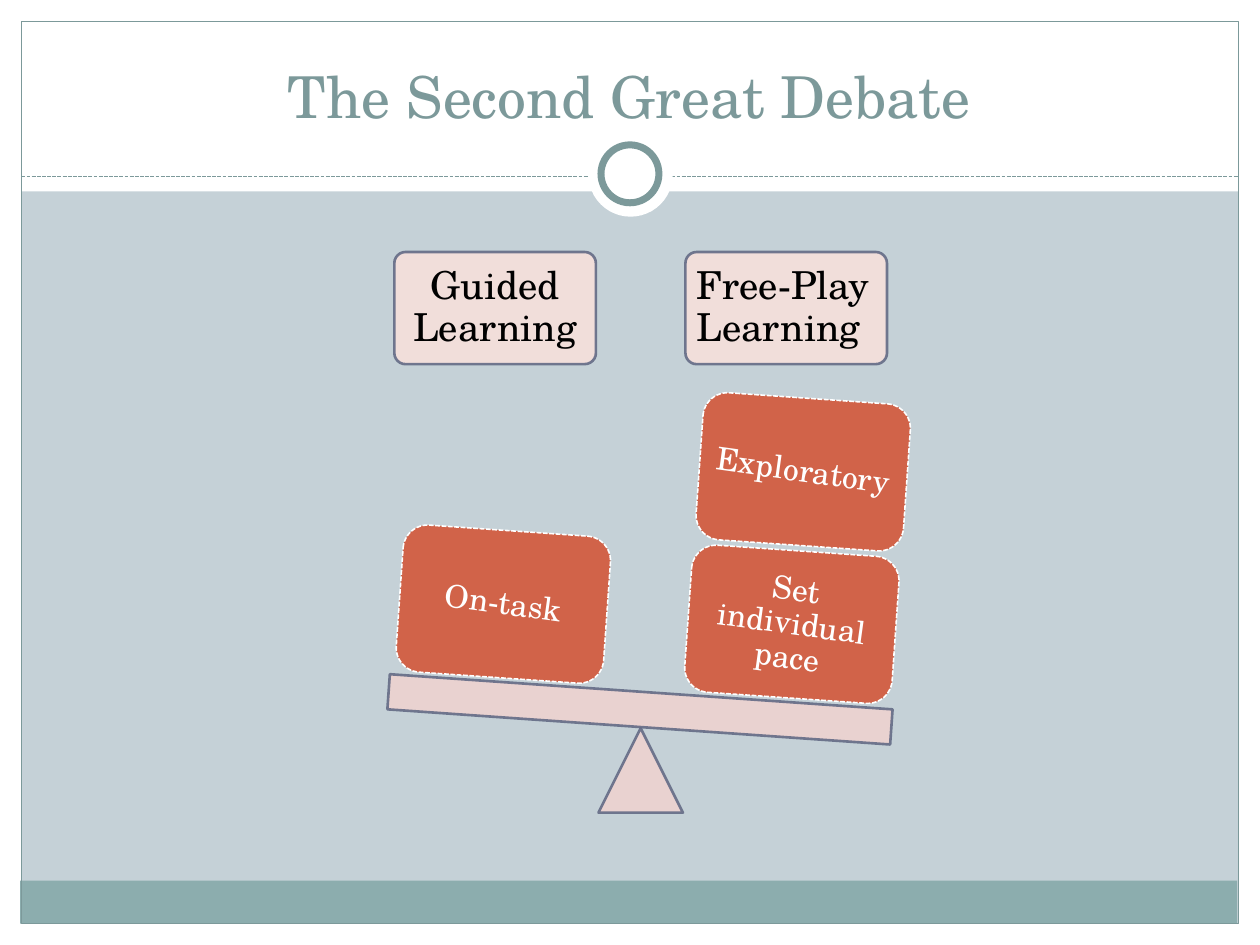
"""Build a slide that weighs guided learning against free-play learning."""
from dataclasses import dataclass

from pptx import Presentation
from pptx.dml.color import RGBColor
from pptx.enum.dml import MSO_LINE
from pptx.enum.shapes import MSO_CONNECTOR, MSO_SHAPE
from pptx.enum.text import MSO_ANCHOR, MSO_AUTO_SIZE, PP_ALIGN
from pptx.oxml.ns import qn
from pptx.util import Inches, Pt
from lxml import etree

RECTANGLE = MSO_SHAPE.RECTANGLE
ROUNDED = MSO_SHAPE.ROUNDED_RECTANGLE
OVAL = MSO_SHAPE.OVAL
TRIANGLE = MSO_SHAPE.ISOSCELES_TRIANGLE
STRAIGHT = MSO_CONNECTOR.STRAIGHT
DASH = MSO_LINE.SQUARE_DOT
MIDDLE, BOTTOM = MSO_ANCHOR.MIDDLE, MSO_ANCHOR.BOTTOM
CENTER, LEFT = PP_ALIGN.CENTER, PP_ALIGN.LEFT
NO_AUTOFIT = MSO_AUTO_SIZE.NONE

FONT = "TeX Gyre Schola"
WHITE, BLACK = "FFFFFF", "000000"
BACKGROUND, TEAL, FOOTER = "C5D1D7", "7C999A", "8CADAE"
SLATE, HEADING, BALANCE, WEIGHT = "646B86", "F6E0DB", "EED3D0", "D16349"
WIDTH, HEIGHT, MARGIN = 10, 7.5, 0.17
TILT = 4


@dataclass
class Block:
    left: float
    top: float
    width: float
    height: float
    kind: int = RECTANGLE
    fill: str | None = WHITE
    line: str | None = None
    weight: float = 0.75
    dash: int | None = None
    rotation: float = 0
    alpha: int = 100


@dataclass
class Label:
    text: str
    size: float
    color: str
    inset: float = 0.05
    align: int = CENTER
    anchor: int = MIDDLE
    spacing: float = 0.9


def rgb(value: str) -> RGBColor:
    """Turn a hex string into a colour."""
    return RGBColor.from_string(value)


def draw_block(page, block: Block):
    """Draw one preset shape."""
    box = page.shapes.add_shape(
        block.kind, *map(Inches, (block.left, block.top, block.width, block.height)))
    box.shadow.inherit = False
    box.rotation = block.rotation
    if block.fill:
        box.fill.solid()
        box.fill.fore_color.rgb = rgb(block.fill)
    else:
        box.fill.background()
    if block.line:
        box.line.color.rgb = rgb(block.line)
        box.line.width = Pt(block.weight)
        box.line.dash_style = block.dash
    else:
        box.line.fill.background()
    if block.alpha < 100:
        for color in box.element.iter(qn("a:srgbClr")):
            etree.SubElement(color, qn("a:alpha"), val=str(block.alpha * 1000))
    return box


def write_label(box, label: Label) -> None:
    """Fill a text shape with one formatted paragraph."""
    frame = box.text_frame
    inset = Inches(label.inset)
    formats = {
        "word_wrap": True, "auto_size": NO_AUTOFIT, "vertical_anchor": label.anchor,
        "margin_left": inset, "margin_right": inset,
        "margin_top": inset, "margin_bottom": inset,
    }
    for name, value in formats.items():
        setattr(frame, name, value)
    para = frame.paragraphs[0]
    para.alignment = label.align
    para.line_spacing = label.spacing
    span = para.add_run()
    span.text = label.text
    for name, value in {"name": FONT, "size": Pt(label.size), "bold": False}.items():
        setattr(span.font, name, value)
    span.font.color.rgb = rgb(label.color)


def draw_frame(page) -> None:
    """Draw the white border, footer band, divider and ring."""
    for block in (
        Block(0, HEIGHT - MARGIN, WIDTH, MARGIN),
        Block(0, 0, WIDTH, 1.52),
        Block(0, 0, MARGIN, HEIGHT),
        Block(WIDTH - MARGIN, 0, MARGIN, HEIGHT),
        Block(0.16, 6.99, 9.66, 0.34, fill=FOOTER),
        Block(MARGIN, MARGIN, WIDTH - 2 * MARGIN, HEIGHT - 2 * MARGIN,
              fill=None, line=TEAL),
    ):
        draw_block(page, block)
    divider = page.shapes.add_connector(
        STRAIGHT, *map(Inches, (MARGIN, 1.4, WIDTH - MARGIN, 1.4)))
    divider.line.color.rgb = rgb(TEAL)
    divider.line.width = Pt(0.75)
    divider.line.dash_style = DASH
    etree.SubElement(divider.element.spPr, qn("a:effectLst"))
    draw_block(page, Block(4.67, 1.05, 0.67, 0.67, OVAL))
    draw_block(page, Block(4.77, 1.15, 0.46, 0.46, OVAL, line=TEAL, weight=4))


def place_title(page, text: str) -> None:
    """Move the title placeholder above the frame and format it."""
    title = page.shapes.title
    title.element.getparent().append(title.element)
    places = {"left": 0.33, "top": 0.25, "width": 9.33, "height": 0.83}
    for name, value in places.items():
        setattr(title, name, Inches(value))
    write_label(title, Label(text, 33, TEAL, anchor=BOTTOM, spacing=1))


def draw_heading(page, left: float, text: str, align: int) -> None:
    """Draw the heading over one side of the balance."""
    block = Block(left, 2, 1.6, 0.89, ROUNDED, HEADING, SLATE, 1.5, alpha=90)
    draw_block(page, block).adjustments[0] = 0.1
    box = page.shapes.add_textbox(
        *map(Inches, (left, block.top, block.width, block.height)))
    write_label(box, Label(text, 22, BLACK, 0.09, align))


def draw_weight(page, left: float, top: float, text: str) -> None:
    """Draw a tilted weight and its text, which tilts twice as far."""
    block = Block(left, top, 1.65, 1.17, ROUNDED, WEIGHT, WHITE, 0.9, DASH, TILT)
    draw_block(page, block)
    box = page.shapes.add_textbox(
        *map(Inches, (left, top, block.width, block.height)))
    box.rotation = 2 * TILT
    write_label(box, Label(text, 18, WHITE, 0.07))


def main() -> None:
    """Build and save the deck."""
    deck = Presentation()
    deck.slide_width, deck.slide_height = Inches(WIDTH), Inches(HEIGHT)
    page = deck.slides.add_slide(deck.slide_layouts.get_by_name("Title Only"))
    page.background.fill.solid()
    page.background.fill.fore_color.rgb = rgb(BACKGROUND)
    draw_frame(page)
    place_title(page, "The Second Great Debate")
    draw_heading(page, 3.13, "Guided Learning", CENTER)
    draw_heading(page, 5.44, "Free-Play Learning", LEFT)
    draw_block(page, Block(4.75, 5.78, 0.67, 0.67, TRIANGLE, BALANCE, SLATE, 1.5, alpha=90))
    draw_block(page, Block(3.08, 5.49, 4, 0.28, RECTANGLE, BALANCE, SLATE, 1.5,
                           rotation=TILT, alpha=90))
    for left, top, text in (
        (5.46, 4.37, "Set individual pace"),
        (5.55, 3.16, "Exploratory"),
        (3.17, 4.21, "On-task"),
    ):
        draw_weight(page, left, top, text)
    deck.save("out.pptx")


if __name__ == "__main__":
    main()
